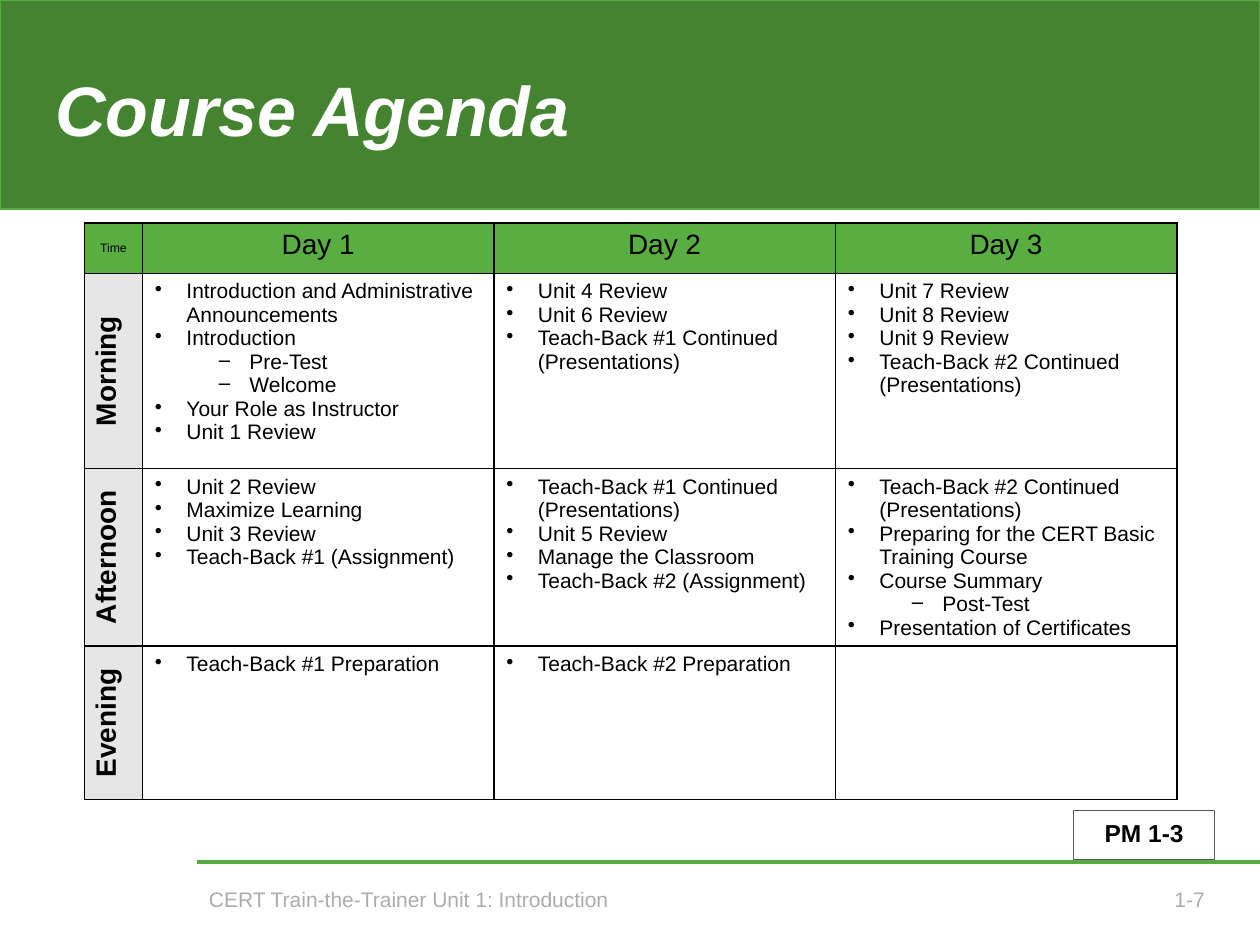
from pptx import Presentation
from pptx.dml.color import RGBColor
from pptx.enum.shapes import MSO_CONNECTOR, MSO_SHAPE
from pptx.enum.text import MSO_ANCHOR as Anchor, MSO_AUTO_SIZE, PP_ALIGN as Align
from pptx.oxml.ns import qn
from pptx.util import Inches, Pt
from lxml.etree import SubElement

WIDTH, HEIGHT = 10, 7.5
FONT = "Arial"
BLACK = RGBColor(0x00, 0x00, 0x00)
WHITE = RGBColor(0xFF, 0xFF, 0xFF)
DARK_GREEN = RGBColor(0x44, 0x84, 0x31)
RULE_GREEN = RGBColor(0x57, 0xAC, 0x40)
HEADER_GREEN = RGBColor(0x58, 0xAE, 0x40)
LABEL_GRAY = RGBColor(0xE7, 0xE6, 0xE6)
FOOTER_GRAY = RGBColor(0xAF, 0xAB, 0xAB)
BOX_GRAY = RGBColor(0x57, 0x57, 0x57)

COLUMNS = (0.46, 2.79, 2.71, 2.71)
ROWS = (0.4, 1.55, 1.4, 1.22)
HEADINGS = ("Time", "Day 1", "Day 2", "Day 3")
SUBITEMS = ("Pre-Test", "Welcome", "Post-Test")
AGENDA = {
    "Morning": (
        ("Introduction and Administrative Announcements", "Introduction",
         "Pre-Test", "Welcome", "Your Role as Instructor", "Unit 1 Review"),
        ("Unit 4 Review", "Unit 6 Review",
         "Teach-Back #1 Continued (Presentations)"),
        ("Unit 7 Review", "Unit 8 Review", "Unit 9 Review",
         "Teach-Back #2 Continued (Presentations)"),
    ),
    "Afternoon": (
        ("Unit 2 Review", "Maximize Learning", "Unit 3 Review",
         "Teach-Back #1 (Assignment)"),
        ("Teach-Back #1 Continued (Presentations)", "Unit 5 Review",
         "Manage the Classroom", "Teach-Back #2 (Assignment)"),
        ("Teach-Back #2 Continued (Presentations)",
         "Preparing for the CERT Basic Training Course", "Course Summary",
         "Post-Test", "Presentation of Certificates"),
    ),
    "Evening": (
        ("Teach-Back #1 Preparation",),
        ("Teach-Back #2 Preparation",),
        (),
    ),
}


def style_text(para, size, color=BLACK, align=Align.LEFT, bold=False, italic=False):
    """Format a paragraph and all its runs."""
    para.alignment = align
    for span in para.runs:
        font = span.font
        font.name, font.size = FONT, Pt(size)
        font.bold, font.italic = bold, italic
        font.color.rgb = color


def fill_frame(frame, text, size, **style):
    """Put one vertically centred line of text in a frame."""
    frame.word_wrap = True
    frame.auto_size = MSO_AUTO_SIZE.NONE
    frame.vertical_anchor = Anchor.MIDDLE
    frame.text = text
    frame.paragraphs[0].line_spacing = 0.9
    style_text(frame.paragraphs[0], size, **style)


def add_band(page):
    """Lay the green title band behind everything else."""
    band = page.shapes.add_shape(
        MSO_SHAPE.RECTANGLE, 0, 0, Inches(WIDTH), Inches(1.66))
    band.shadow.inherit = False
    band.fill.solid()
    band.fill.fore_color.rgb = DARK_GREEN
    band.line.color.rgb = RULE_GREEN
    band.line.width = Pt(1)
    page.shapes._spTree.insert(2, band._element)


def add_title(page, text):
    """Place the title placeholder on the band."""
    title = page.shapes.title
    title.left, title.top = Inches(0.34), Inches(0.35)
    title.width, title.height = Inches(6.35), Inches(1.11)
    fill_frame(title.text_frame, text, 40, color=WHITE, bold=True, italic=True)


def add_rule(page):
    """Draw the green footer rule to the right edge."""
    top = Inches(6.84)
    rule = page.shapes.add_connector(
        MSO_CONNECTOR.STRAIGHT, Inches(1.56), top, Inches(WIDTH), top)
    rule.line.color.rgb = RULE_GREEN
    rule.line.width = Pt(2.04)
    SubElement(rule._element.spPr, qn("a:effectLst"))


def add_label(page, place, text, size, **style):
    """Add a one-line text box and return it."""
    box = page.shapes.add_textbox(*map(Inches, place))
    fill_frame(box.text_frame, text, size, **style)
    return box


def paint_cell(cell, color):
    """Give a cell thin black borders and a solid fill."""
    properties = cell._tc.get_or_add_tcPr()
    for side in ("lnL", "lnR", "lnT", "lnB"):
        border = SubElement(properties, qn(f"a:{side}"), w=str(Pt(1)))
        solid = SubElement(border, qn("a:solidFill"))
        SubElement(solid, qn("a:srgbClr"), val=str(BLACK))
    cell.fill.solid()
    cell.fill.fore_color.rgb = color


def write_heading(cell, text, size):
    """Write a centred column heading."""
    paint_cell(cell, HEADER_GREEN)
    cell.text = text
    style_text(cell.text_frame.paragraphs[0], size, align=Align.CENTER)


def write_period(cell, text):
    """Write a period of the day, reading upwards."""
    paint_cell(cell, LABEL_GRAY)
    cell._tc.get_or_add_tcPr().set("vert", "vert270")
    cell.text = text
    style_text(cell.text_frame.paragraphs[0], 16, align=Align.CENTER, bold=True)


def write_items(cell, items):
    """Write a bulleted list with dashed subitems."""
    paint_cell(cell, WHITE)
    cell.text = "\n".join(items)
    for para, item in zip(cell.text_frame.paragraphs, items):
        nested = item in SUBITEMS
        para.level = int(nested)
        properties = para._p.get_or_add_pPr()
        properties.set("marL", str(Inches(0.75 if nested else 0.25)))
        properties.set("indent", str(Inches(-0.25)))
        SubElement(properties, qn("a:buChar"), char="‒" if nested else "•")
        style_text(para, 12)


def add_agenda(page):
    """Build the agenda table of days and periods."""
    frame = page.shapes.add_table(
        len(ROWS), len(COLUMNS), Inches(0.67), Inches(1.77),
        Inches(sum(COLUMNS)), Inches(sum(ROWS)))
    table = frame.table
    table.first_row = table.horz_banding = False
    for column, width in zip(table.columns, COLUMNS):
        column.width = Inches(width)
    for row, height in zip(table.rows, ROWS):
        row.height = Inches(height)
    for index, heading in enumerate(HEADINGS):
        write_heading(table.cell(0, index), heading, 16 if index else 7)
    table.cell(0, 0).vertical_anchor = Anchor.MIDDLE
    for row, (period, days) in enumerate(AGENDA.items(), 1):
        write_period(table.cell(row, 0), period)
        for column, items in enumerate(days, 1):
            write_items(table.cell(row, column), items)


def main():
    """Build and save the agenda slide."""
    deck = Presentation()
    deck.slide_width, deck.slide_height = Inches(WIDTH), Inches(HEIGHT)
    page = deck.slides.add_slide(deck.slide_layouts.get_by_name("Title Only"))
    add_band(page)
    add_rule(page)
    add_title(page, "Course Agenda")
    add_agenda(page)
    manual = add_label(page, (8.52, 6.43, 1.12, 0.39), "PM 1-3", 14,
                       align=Align.CENTER, bold=True)
    manual.line.color.rgb = BOX_GRAY
    manual.line.width = Pt(0.75)
    add_label(page, (1.56, 6.98, 4.85, 0.33),
              "CERT Train-the-Trainer Unit 1: Introduction", 12, color=FOOTER_GRAY)
    add_label(page, (7.69, 6.98, 1.97, 0.33), "1-7", 12,
              color=FOOTER_GRAY, align=Align.RIGHT)
    deck.save("out.pptx")


if __name__ == "__main__":
    main()
